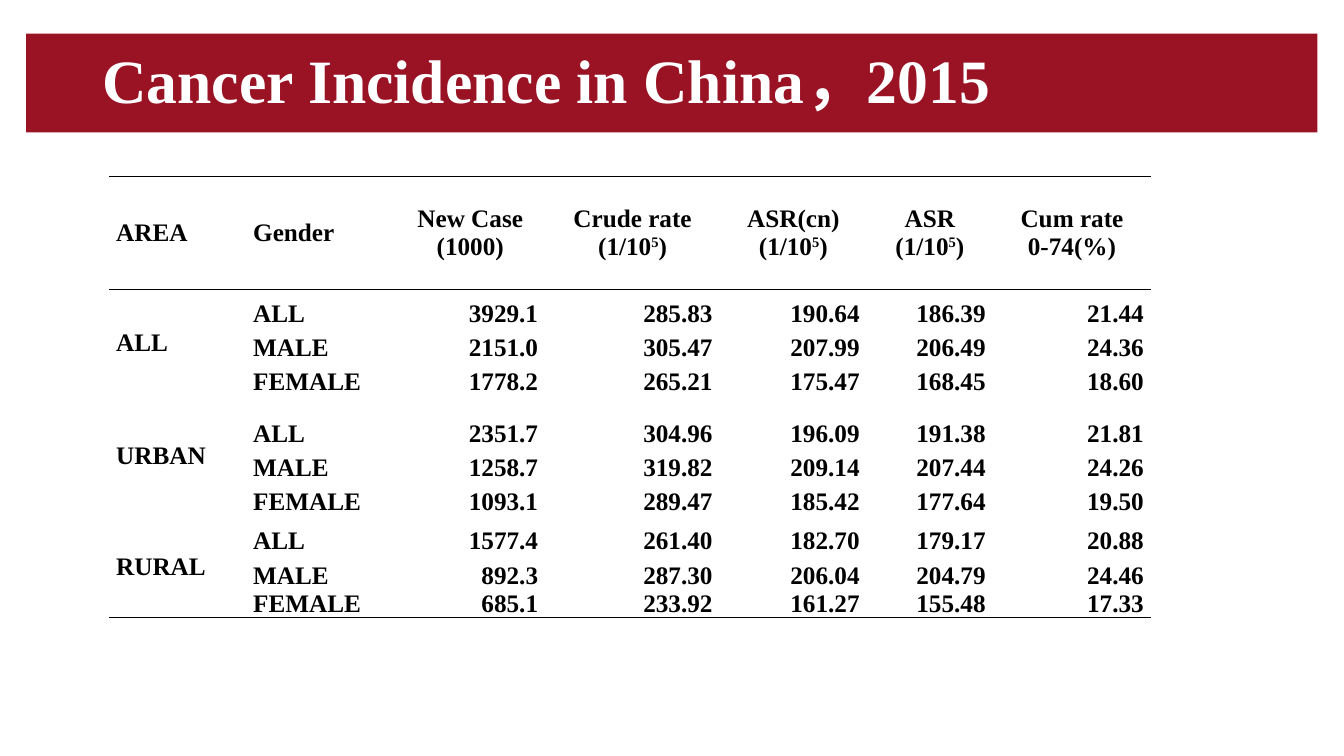
"""Build the cancer incidence slide with its title bar and table."""
from pptx import Presentation
from pptx.dml.color import RGBColor
from pptx.enum.shapes import MSO_SHAPE
from pptx.enum.text import MSO_ANCHOR, MSO_AUTO_SIZE, PP_ALIGN
from pptx.oxml.ns import qn
from pptx.util import Pt
from lxml.etree import SubElement

RED = RGBColor(0x99, 0x13, 0x24)
WHITE = RGBColor(0xFF, 0xFF, 0xFF)
BLACK = RGBColor(0, 0, 0)

COLS = [97.9, 106.6, 107.3, 124.6, 105.1, 90, 113]
ROWS = [80.6, 27.4, 24.5, 24.5, 36.7, 24.5, 24.5, 28.1, 24.5, 18]
HEADS = ["AREA", "Gender", "New Case\n(1000)", "Crude rate (1/10^5^)",
         "ASR(cn)\n(1/10^5^)", "ASR (1/10^5^)", "Cum rate\n0-74(%)"]
AREAS = ["ALL", "URBAN", "RURAL"]
SEXES = ["ALL", "MALE", "FEMALE"]
RATES = [
    ["3929.1", "285.83", "190.64", "186.39", "21.44"],
    ["2151.0", "305.47", "207.99", "206.49", "24.36"],
    ["1778.2", "265.21", "175.47", "168.45", "18.60"],
    ["2351.7", "304.96", "196.09", "191.38", "21.81"],
    ["1258.7", "319.82", "209.14", "207.44", "24.26"],
    ["1093.1", "289.47", "185.42", "177.64", "19.50"],
    ["1577.4", "261.40", "182.70", "179.17", "20.88"],
    ["892.3", "287.30", "206.04", "204.79", "24.46"],
    ["685.1", "233.92", "161.27", "155.48", "17.33"],
]


def write(frame, text, size=18, color=BLACK, font="Times New Roman",
          align=PP_ALIGN.LEFT, space=1.0):
    """Fill a frame, one paragraph a line, raising what stands between carets."""
    for i, line in enumerate(text.split("\n")):
        para = frame.paragraphs[0] if i == 0 else frame.add_paragraph()
        para.alignment = align
        para.line_spacing = space
        for j, part in enumerate(line.split("^")):
            run = para.add_run()
            run.text = part
            run.font.name = font
            run.font.size = Pt(size)
            run.font.bold = True
            run.font.color.rgb = color
            if j % 2:
                run.font._element.set("baseline", "30000")


class Deck:
    """Hold the style and the current slide."""

    def __init__(self):
        """Open a blank wide deck with one titled slide."""
        self.file = Presentation()
        self.file.slide_width, self.file.slide_height = Pt(960), Pt(540)
        self.slide = self.file.slides.add_slide(self.file.slide_layouts[5])
        self.rule = Pt(1)
        self.pad = Pt(5.2)

    def bar(self, *box):
        """Draw the red bar behind everything else."""
        bar = self.slide.shapes.add_shape(MSO_SHAPE.RECTANGLE, *map(Pt, box))
        bar.shadow.inherit = False
        bar.fill.solid()
        bar.fill.fore_color.rgb = RED
        bar.line.fill.background()
        self.slide.shapes._spTree.insert(2, bar._element)

    def title(self, text, *box):
        """Place and format the title."""
        title = self.slide.shapes.title
        title.left, title.top, title.width, title.height = map(Pt, box)
        frame = title.text_frame
        frame.word_wrap = True
        frame.auto_size = MSO_AUTO_SIZE.NONE
        frame.vertical_anchor = MSO_ANCHOR.MIDDLE
        write(frame, text, size=44, color=WHITE, space=0.9)

    def edge(self, cell, tags):
        """Rule the tagged sides of a cell and clear the others."""
        props = cell._tc.get_or_add_tcPr()
        for tag in ("lnL", "lnR", "lnT", "lnB"):
            line = SubElement(props, qn("a:" + tag), w=str(self.rule))
            if tag in tags:
                fill = SubElement(line, qn("a:solidFill"))
                SubElement(fill, qn("a:srgbClr"), val=str(BLACK))
            else:
                SubElement(line, qn("a:noFill"))

    def cell(self, cell, text, align, anchor, tags):
        """Format one table cell."""
        self.edge(cell, tags)
        cell.fill.background()
        cell.margin_left = cell.margin_right = self.pad
        cell.margin_top = cell.margin_bottom = 0
        cell.vertical_anchor = anchor
        if text:
            write(cell.text_frame, text, align=align)

    def table(self, left, top):
        """Build the table of areas, genders and rates."""
        shape = self.slide.shapes.add_table(
            len(ROWS), len(COLS), Pt(left), Pt(top), Pt(sum(COLS)), Pt(sum(ROWS)))
        table = shape.table
        table.first_row = table.horz_banding = False
        for col, width in zip(table.columns, COLS):
            col.width = Pt(width)
        for row, height in zip(table.rows, ROWS):
            row.height = Pt(height)
        span, last = len(SEXES), len(RATES)
        data = [HEADS]
        for i, rates in enumerate(RATES):
            area = "" if i % span else AREAS[i // span]
            data.append([area, SEXES[i % span]] + rates)
        for r, row in enumerate(data):
            for c, text in enumerate(row):
                tags = ["lnT"] if r < 2 else []
                if r in (0, last) or (c == 0 and r + span > last):
                    tags.append("lnB")
                mid = r == 0 or c == 0
                align = PP_ALIGN.LEFT
                if c > 1:
                    align = PP_ALIGN.RIGHT if r else PP_ALIGN.CENTER
                anchor = MSO_ANCHOR.MIDDLE if mid else MSO_ANCHOR.BOTTOM
                self.cell(table.cell(r, c), text, align, anchor, tags)
        for r in range(1, last, span):
            table.cell(r, 0).merge(table.cell(r + span - 1, 0))


def main():
    """Build and save the deck."""
    deck = Deck()
    deck.bar(18.7, 24, 922.3, 70.5)
    deck.title("Cancer Incidence in China，2015", 66, 28.8, 828, 61.2)
    deck.table(77.8, 126)
    deck.file.save("out.pptx")


if __name__ == "__main__":
    main()
